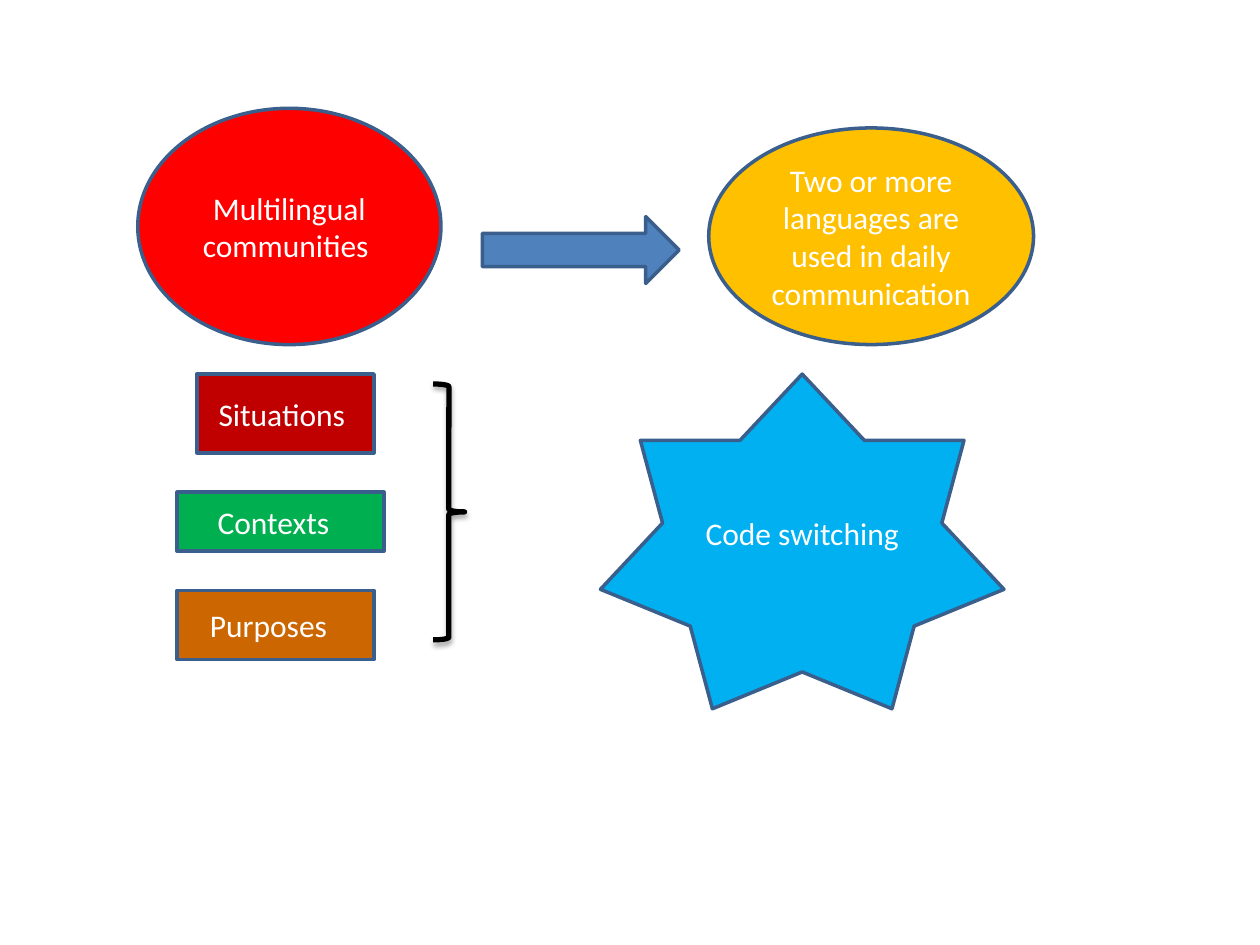
from lxml import etree
from pptx import Presentation
from pptx.dml.color import RGBColor
from pptx.enum.shapes import MSO_SHAPE
from pptx.enum.text import MSO_ANCHOR, PP_ALIGN
from pptx.oxml.ns import qn
from pptx.util import Pt

ELLIPSE, RECT = MSO_SHAPE.OVAL, MSO_SHAPE.RECTANGLE
ARROW, BRACE = MSO_SHAPE.RIGHT_ARROW, MSO_SHAPE.RIGHT_BRACE
STAR = MSO_SHAPE.STAR_7_POINT
CENTER, MIDDLE = PP_ALIGN.CENTER, MSO_ANCHOR.MIDDLE

FONT = "Calibri"
COLORS = {
    "outline": "3A5F8C",
    "text": "FFFFFF",
    "brace": "000000",
    "community": "FF0000",
    "languages": "FFC000",
    "situations": "C00000",
    "contexts": "00B050",
    "purposes": "CC6600",
    "arrow": "4F81BD",
    "switching": "00B0F0",
}


def rgb(name):
    return RGBColor.from_string(COLORS[name])


def add_outline(s, kind, box, line, width):
    sp = s.shapes.add_shape(kind, *(Pt(v) for v in box))
    sp.shadow.inherit = False
    sp.line.color.rgb = rgb(line)
    sp.line.width = Pt(width)
    return sp


def add_filled(s, kind, box, fill, text=""):
    sp = add_outline(s, kind, box, "outline", 2)
    sp.fill.solid()
    sp.fill.fore_color.rgb = rgb(fill)
    if text:
        tf = sp.text_frame
        tf.text = text
        tf.word_wrap = True
        tf.vertical_anchor = MIDDLE
        p = tf.paragraphs[0]
        p.alignment = CENTER
        font = p.runs[0].font
        font.name, font.size = FONT, Pt(18)
        font.color.rgb = rgb("text")


def add_brace(s, box):
    sp = add_outline(s, BRACE, box, "brace", 3)
    sp.fill.background()
    # Soft shadow straight below
    effects = sp._element.spPr.find(qn("a:effectLst"))
    shadow = etree.SubElement(effects, qn("a:outerShdw"), blurRad=str(Pt(3.1)),
                              dist=str(Pt(1.8)), dir="5400000", rotWithShape="0")
    color = etree.SubElement(shadow, qn("a:srgbClr"), val=COLORS["brace"])
    etree.SubElement(color, qn("a:alpha"), val="35000")


def main():
    prs = Presentation()
    prs.slide_width, prs.slide_height = Pt(720), Pt(540)
    s = prs.slides.add_slide(prs.slide_layouts[6])

    # Communities and what defines them
    add_filled(s, ELLIPSE, (78.75, 61.9, 173.25, 135), "community",
               "Multilingual communities ")
    add_filled(s, ELLIPSE, (405, 73.1, 185.6, 123.8), "languages",
               "Two or more languages are used in daily communication ")

    # Factors
    add_filled(s, RECT, (112.5, 213.75, 101.25, 45), "situations", "Situations ")
    add_filled(s, RECT, (101.25, 281.25, 118.1, 33.75), "contexts", "Contexts  ")
    add_filled(s, RECT, (101.25, 337.5, 112.5, 39.4), "purposes", "Purposes  ")

    # Links and outcome
    add_filled(s, ARROW, (275.6, 123.75, 112.5, 38.25), "arrow")
    add_brace(s, (247.5, 219.4, 18, 146.25))
    add_filled(s, STAR, (343.1, 213.75, 230.6, 191.25), "switching",
               "Code switching ")

    prs.save("out.pptx")


if __name__ == "__main__":
    main()
